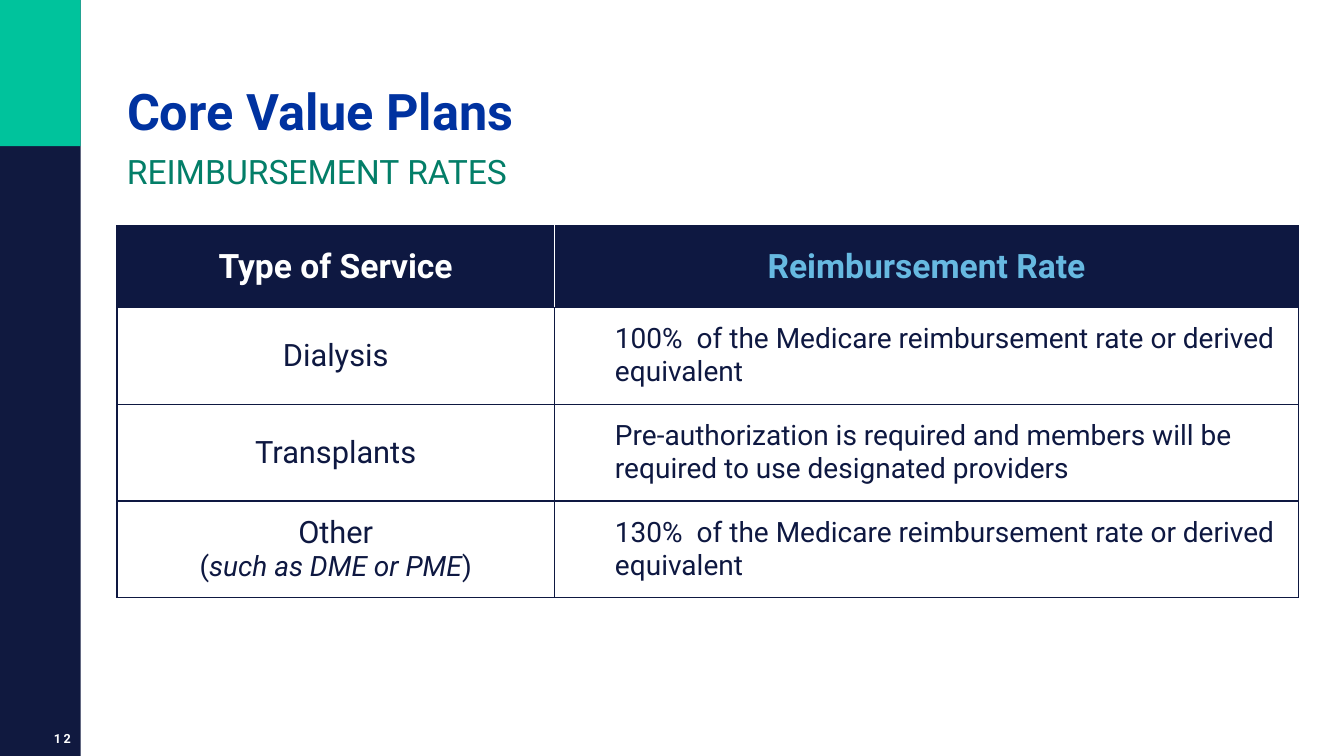
"""Build the Core Value Plans slide with its table of reimbursement rates."""
import pptx
import pptx.dml.color
import pptx.enum.shapes
import pptx.enum.text
import pptx.oxml
import pptx.oxml.ns
import pptx.util

Inches = pptx.util.Inches
Pt = pptx.util.Pt
RGBColor = pptx.dml.color.RGBColor
ALIGN = pptx.enum.text.PP_ALIGN
ANCHOR = pptx.enum.text.MSO_ANCHOR

NAVY = RGBColor(0x10, 0x19, 0x3F)
INK = RGBColor(0x0E, 0x18, 0x41)
MINT = RGBColor(0x00, 0xC3, 0x9C)
GREEN = RGBColor(0x03, 0x7E, 0x68)
BLUE = RGBColor(0x00, 0x32, 0xA0)
SKY = RGBColor(0x67, 0xB9, 0xE1)
WHITE = RGBColor(0xFF, 0xFF, 0xFF)

FONT = "Roboto"
LEFT = 1.16
BAR = 0.8
WIDTHS = (4.34, 7.38)
HEIGHTS = (0.81, 0.96, 0.96, 0.96)
SERVICES = (
    ("Dialysis", "100%  of the Medicare reimbursement rate or derived equivalent"),
    ("Transplants", "Pre-authorization is required and members will be "
                    "required to use designated providers"),
    ("Other", "130%  of the Medicare reimbursement rate or derived equivalent"),
)


def style(font, size, color, bold=False):
    font.name = FONT
    font.size = Pt(size)
    font.bold = bold
    font.color.rgb = color


def add_bar(slide, height, color):
    bar = slide.shapes.add_shape(
        pptx.enum.shapes.MSO_SHAPE.RECTANGLE, 0, 0, Inches(BAR), Inches(height))
    bar.shadow.inherit = False
    bar.fill.solid()
    bar.fill.fore_color.rgb = color
    bar.line.fill.background()


def add_title(slide, text):
    title = slide.shapes.title
    title.left, title.top = Inches(LEFT), 0
    title.width, title.height = Inches(11.53), Inches(1.45)
    frame = title.text_frame
    frame.auto_size = pptx.enum.text.MSO_AUTO_SIZE.NONE
    frame.vertical_anchor = ANCHOR.BOTTOM
    frame.text = text
    para = frame.paragraphs[0]
    para.alignment = ALIGN.LEFT
    para.line_spacing = 0.9
    style(para.font, 36, BLUE, True)


def add_label(slide, text, left, top, width, height, size, color, bold=False):
    box = slide.shapes.add_textbox(
        Inches(left), Inches(top), Inches(width), Inches(height))
    frame = box.text_frame
    frame.word_wrap = True
    frame.text = text
    para = frame.paragraphs[0]
    style(para.font, size, color, bold)
    return para, frame


def add_number(slide, text):
    para, frame = add_label(slide, text, 0, 7.16, BAR, 0.34, 9, WHITE, True)
    frame.vertical_anchor = ANCHOR.MIDDLE
    para.alignment = ALIGN.RIGHT
    para.runs[0].font._element.set("spc", "170")


def set_edges(cell, **colors):
    props = cell._tc.get_or_add_tcPr()
    for place, side in enumerate("LRTB"):
        color = colors.get(side, INK)
        edge = pptx.oxml.parse_xml(
            f'<a:ln{side} {pptx.oxml.ns.nsdecls("a")} w="12700"><a:solidFill>'
            f'<a:srgbClr val="{color}"/></a:solidFill></a:ln{side}>')
        props.insert(place, edge)


def fill_cell(cell, text, size, color, bold=False, align=ALIGN.CENTER):
    cell.vertical_anchor = ANCHOR.MIDDLE
    cell.text = text
    para = cell.text_frame.paragraphs[0]
    para.alignment = align
    style(para.font, size, color, bold)
    return para


def add_head(table):
    heads = (("Type of Service", WHITE, "R"), ("Reimbursement Rate", SKY, "L"))
    for col, (text, color, side) in enumerate(heads):
        cell = table.cell(0, col)
        fill_cell(cell, text, 24, color, True)
        cell.fill.solid()
        cell.fill.fore_color.rgb = INK
        set_edges(cell, **{side: WHITE})


def add_note(para):
    style(para.runs[0].font, 22, INK)
    para.add_line_break()
    for text, slant in (("(", False), ("such as DME or PME", True), (")", False)):
        run = para.add_run()
        run.text = text
        style(run.font, 20, INK)
        run.font.italic = slant


def add_table(slide):
    frame = slide.shapes.add_table(
        len(HEIGHTS), len(WIDTHS), Inches(LEFT), Inches(2.24),
        Inches(sum(WIDTHS)), Inches(sum(HEIGHTS)))
    table = frame.table
    table.first_row = table.horz_banding = False
    for col, width in zip(table.columns, WIDTHS):
        col.width = Inches(width)
    for row, height in zip(table.rows, HEIGHTS):
        row.height = Inches(height)
    add_head(table)
    for row, (name, rate) in enumerate(SERVICES, 1):
        left, right = table.cell(row, 0), table.cell(row, 1)
        para = fill_cell(left, name, 22, INK)
        if name == "Other":
            add_note(para)
        para = fill_cell(right, rate, 20, INK, align=ALIGN.LEFT)
        props = para._p.get_or_add_pPr()
        props.set("marL", str(Inches(0.5)))
        props.set("indent", "0")
        for cell in (left, right):
            cell.fill.background()
            set_edges(cell)


def main():
    deck = pptx.Presentation()
    deck.slide_width, deck.slide_height = Inches(13.33), Inches(7.5)
    slide = deck.slides.add_slide(deck.slide_layouts[5])
    add_bar(slide, 7.5, NAVY)
    add_bar(slide, 1.45, MINT)
    add_table(slide)
    add_title(slide, "Core Value Plans")
    add_number(slide, "12")
    add_label(slide, "REIMBURSEMENT RATES", LEFT, 1.45, 11.53, 0.51, 24, GREEN)
    deck.save("out.pptx")


if __name__ == "__main__":
    main()
